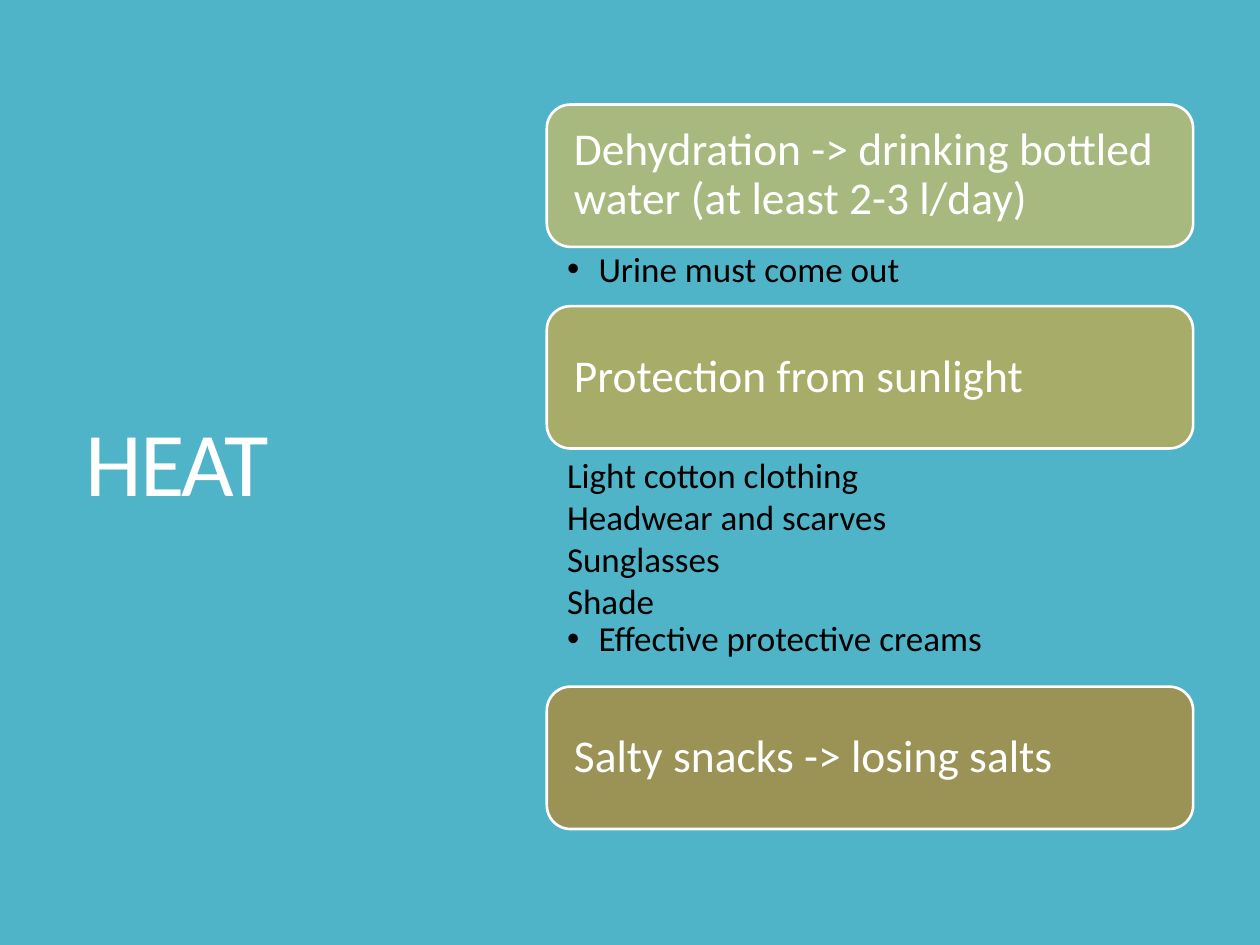
import pptx
import pptx.util
import pptx.dml.color
import pptx.enum.shapes
import pptx.enum.text
import pptx.oxml.ns
import lxml.etree

Inches = pptx.util.Inches
Pt = pptx.util.Pt
RGB = pptx.dml.color.RGBColor
Anchor = pptx.enum.text.MSO_ANCHOR

BLUE = RGB(0x50, 0xB4, 0xC8)
WHITE = RGB(0xFF, 0xFF, 0xFF)
BLACK = RGB(0x00, 0x00, 0x00)
GREEN = RGB(0xA8, 0xB9, 0x7F)
OLIVE = RGB(0xA7, 0xAC, 0x68)
BROWN = RGB(0x9B, 0x92, 0x56)

LEFT, WIDTH, HIGH = 4.34, 5.13, 1.13


class Deck:
    font = "Calibri"

    def __init__(self):
        self.file = pptx.Presentation()
        self.file.slide_width = Inches(10)
        self.file.slide_height = Inches(7.5)
        self.slide = self.file.slides.add_slide(self.file.slide_layouts[3])
        fill = self.slide.background.fill
        fill.solid()
        fill.fore_color.rgb = BLUE

    def place(self, shape, left, top, width, height):
        shape.left, shape.top = Inches(left), Inches(top)
        shape.width, shape.height = Inches(width), Inches(height)

    def frame(self, shape, anchor, left, right, edge):
        frame = shape.text_frame
        frame.word_wrap = True
        frame.auto_size = pptx.enum.text.MSO_AUTO_SIZE.NONE
        frame.vertical_anchor = anchor
        frame.margin_left, frame.margin_right = Inches(left), Inches(right)
        frame.margin_top = frame.margin_bottom = Inches(edge)
        return frame

    def text(self, para, words, size, color, gap=0.9):
        para.alignment = pptx.enum.text.PP_ALIGN.LEFT
        para.line_spacing = gap
        para.space_before = para.space_after = Pt(0)
        run = para.add_run()
        run.text = words
        run.font.name = self.font
        run.font.size = Pt(size)
        run.font.color.rgb = color
        return run

    def title(self, words):
        shape = self.slide.shapes.title
        self.place(shape, 0.58, 0.7, 3.28, 6.01)
        frame = self.frame(shape, Anchor.MIDDLE, 0.1, 0.1, 0.05)
        run = self.text(frame.paragraphs[0], words, 52, WHITE)
        run.font._element.set("spc", "-120")

    def card(self, top, words, color):
        kind = pptx.enum.shapes.MSO_SHAPE.ROUNDED_RECTANGLE
        shape = self.slide.shapes.add_shape(
            kind, Inches(LEFT), Inches(top), Inches(WIDTH), Inches(HIGH))
        shape.shadow.inherit = False
        shape.fill.solid()
        shape.fill.fore_color.rgb = color
        shape.line.color.rgb = WHITE
        shape.line.width = Pt(1.5)
        frame = self.frame(shape, Anchor.MIDDLE, 0.16, 0.16, 0.16)
        self.text(frame.paragraphs[0], words, 26, WHITE)

    def list(self, slot, top, height, plain, point):
        shape = self.slide.placeholders[slot]
        self.place(shape, LEFT, top, WIDTH, height)
        frame = self.frame(shape, Anchor.TOP, 0.16, 0.2, 0.04)
        para = frame.paragraphs[0]
        for words in plain:
            self.text(para, words, 20, BLACK, 1.0)
            self.mark(para, 0, "a:buNone")
            para = frame.add_paragraph()
        self.text(para, point, 20, BLACK)
        self.mark(para, 0.25, "a:buChar", char="•")

    def mark(self, para, indent, tag, **attrs):
        props = para._p.get_or_add_pPr()
        props.set("marL", str(Inches(indent)))
        props.set("indent", str(-Inches(indent)))
        lxml.etree.SubElement(props, pptx.oxml.ns.qn(tag), **attrs)


def main():
    deck = Deck()
    deck.title("HEAT")
    deck.card(0.83, "Dehydration -> drinking bottled water (at least 2-3 l/day)", GREEN)
    deck.list(1, 1.96, 0.47, [], "Urine must come out")
    deck.card(2.43, "Protection from sunlight", OLIVE)
    clothes = ["Light cotton clothing", "Headwear and scarves", "Sunglasses", "Shade"]
    deck.list(2, 3.56, 1.88, clothes, "Effective protective creams")
    deck.card(5.45, "Salty snacks -> losing salts", BROWN)
    deck.file.save("out.pptx")


if __name__ == "__main__":
    main()
